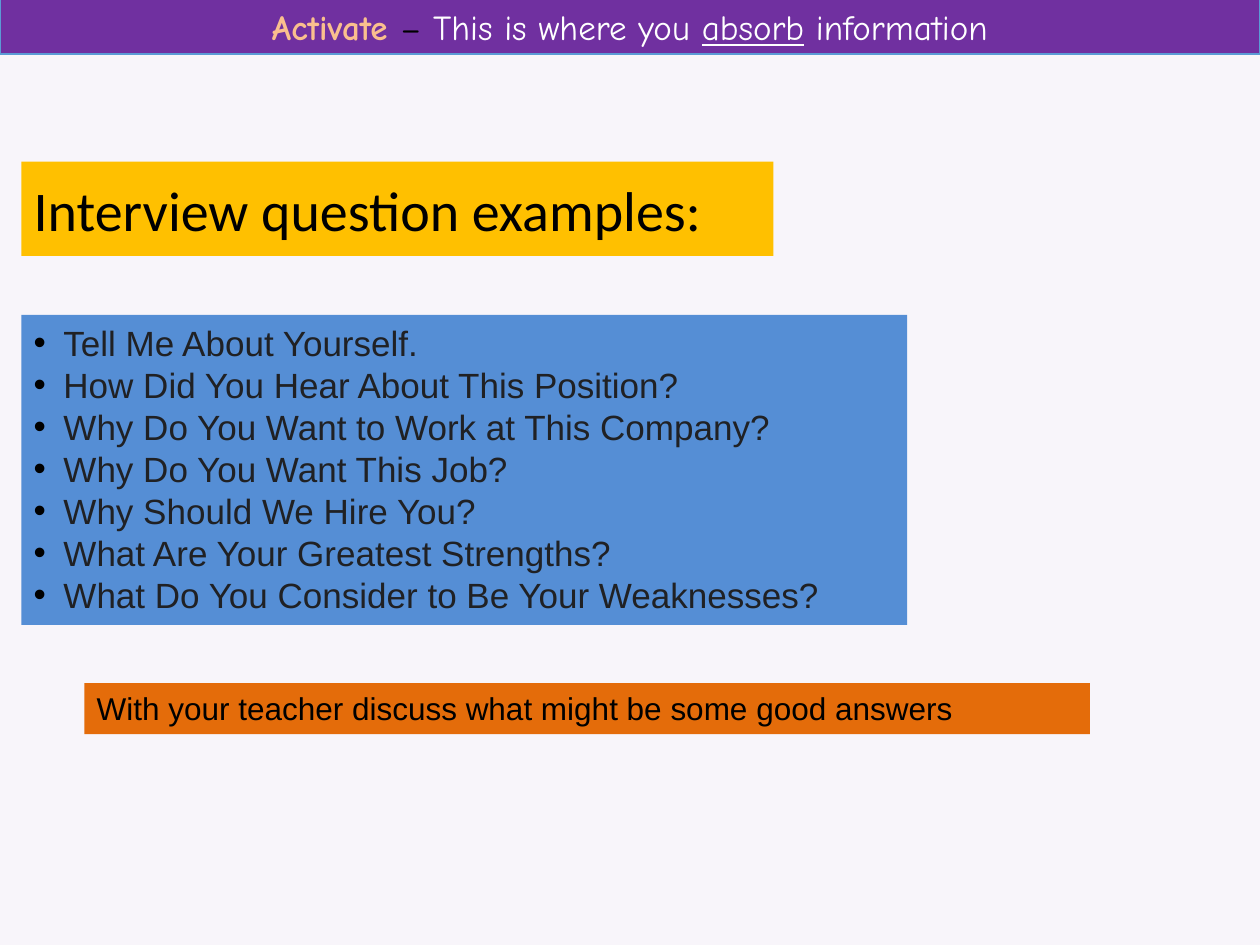
"""Build the slide of interview question examples."""
from dataclasses import dataclass

from lxml import etree
from pptx import Presentation
from pptx.dml.color import RGBColor
from pptx.enum import shapes, text
from pptx.oxml.ns import qn
from pptx.util import Cm, Pt


@dataclass(frozen=True)
class Theme:
    background: str = "F8F5FA"
    banner: str = "7030A0"
    banner_line: str = "5B9BD5"
    accent: str = "FABF8E"
    heading: str = "FFC000"
    questions: str = "558ED5"
    task: str = "E46C0A"
    black: str = "000000"
    white: str = "FFFFFF"
    ink: str = "202124"
    heading_size: int = 32
    body_size: int = 20
    task_size: int = 18
    line_pitch: int = 24


theme = Theme()


def add_box(left, top, width, height, fill, anchor):
    sp = s.shapes.add_shape(shapes.MSO_SHAPE.RECTANGLE, Cm(left), Cm(top), Cm(width), Cm(height))
    sp.shadow.inherit = False
    sp.fill.solid()
    sp.fill.fore_color.rgb = RGBColor.from_string(fill)
    sp.line.fill.background()
    sp.text_frame.word_wrap = True
    sp.text_frame.vertical_anchor = anchor
    return sp


def set_font(p, name, size, color):
    p.alignment = text.PP_ALIGN.LEFT
    p.font.name = name
    p.font.size = Pt(size)
    p.font.color.rgb = RGBColor.from_string(color)


prs = Presentation()
prs.slide_width, prs.slide_height = Cm(25.4), Cm(19.05)
s = prs.slides.add_slide(prs.slide_layouts[6])
s.background.fill.solid()
s.background.fill.fore_color.rgb = RGBColor.from_string(theme.background)

middle, top = text.MSO_ANCHOR.MIDDLE, text.MSO_ANCHOR.TOP

banner = add_box(0, -0.03, 25.4, 1.12, theme.banner, middle)
banner.line.color.rgb = RGBColor.from_string(theme.banner_line)
banner.line.width = Pt(1)
p = banner.text_frame.paragraphs[0]
set_font(p, "Comic Neue", theme.body_size, theme.white)
p.alignment = text.PP_ALIGN.CENTER
for words, color, bold, underline in [
    ("Activate ", theme.accent, True, False),
    ("– ", theme.black, False, False),
    ("This is where you ", theme.white, False, False),
    ("absorb", theme.white, False, True),
    (" information", theme.white, False, False),
]:
    r = p.add_run()
    r.text = words
    r.font.color.rgb = RGBColor.from_string(color)
    r.font.bold = bold
    r.font.underline = underline

heading = add_box(0.43, 3.26, 15.16, 1.9, theme.heading, middle)
p = heading.text_frame.paragraphs[0]
p.text = "Interview question examples:"
set_font(p, "Calibri", theme.heading_size, theme.black)

questions = add_box(0.43, 6.35, 17.86, 6.25, theme.questions, top)
tf = questions.text_frame
tf.text = "\n".join([
    "Tell Me About Yourself.",
    "How Did You Hear About This Position?",
    "Why Do You Want to Work at This Company?",
    "Why Do You Want This Job?",
    "Why Should We Hire You?",
    "What Are Your Greatest Strengths?",
    "What Do You Consider to Be Your Weaknesses?",
])
for p in tf.paragraphs:
    set_font(p, "Arial", theme.body_size, theme.ink)
    p.line_spacing = Pt(theme.line_pitch)
    pPr = p._p.get_or_add_pPr()
    pPr.set("marL", str(Cm(0.6)))
    pPr.set("indent", str(-Cm(0.6)))
    bullet_color = etree.Element(qn("a:buClr"))
    etree.SubElement(bullet_color, qn("a:srgbClr"), val=theme.black)
    bullet_font = etree.Element(qn("a:buFont"), typeface="Arial")
    bullet = etree.Element(qn("a:buChar"), char="•")
    pPr.find(qn("a:lnSpc")).addnext(bullet_color)
    bullet_color.addnext(bullet_font)
    bullet_font.addnext(bullet)

task = add_box(1.7, 13.77, 20.27, 1.03, theme.task, top)
p = task.text_frame.paragraphs[0]
p.text = "With your teacher discuss what might be some good answers"
set_font(p, "Arial", theme.task_size, theme.black)

prs.save("out.pptx")
